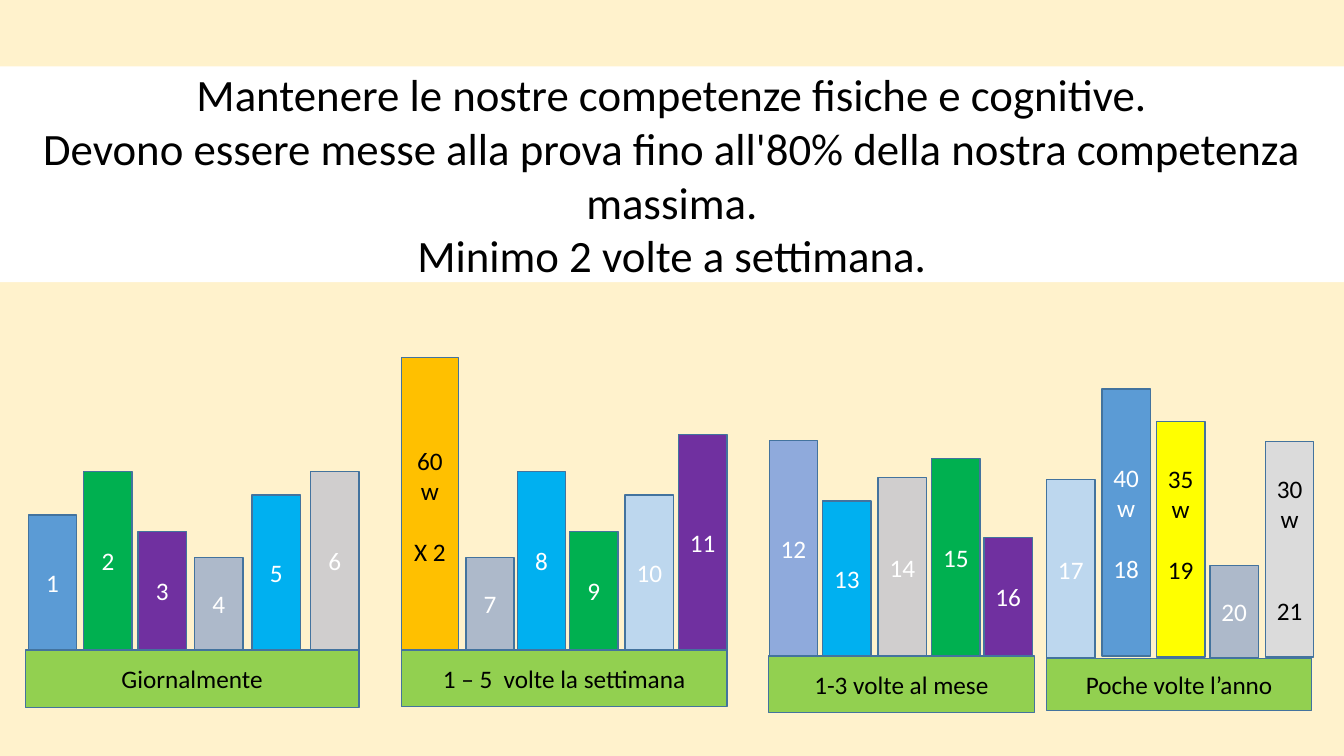
"""Build a slide of numbered activity bars grouped by how often they are practised."""
import pptx
import pptx.dml.color
import pptx.enum.shapes
import pptx.enum.text
import pptx.util

Inches, Pt = pptx.util.Inches, pptx.util.Pt
LINE_HEIGHT = 22
COLORS = {
    "cream": "FFF2CC", "white": "FFFFFF", "black": "000000", "outline": "43739E",
    "lime": "92D050", "blue": "5B9BD5", "green": "00B050", "purple": "7030A0",
    "slate": "ADB9CA", "sky": "00B0F0", "silver": "D0CECE", "orange": "FFC000",
    "pale": "BDD7EE", "periwinkle": "8FAADC", "yellow": "FFFF00", "gray": "DBDBDB",
}


def rgb(name):
    return pptx.dml.color.RGBColor.from_string(COLORS[name])


def add_box(left, top, width, height, fill, lines, color="black", size=18, outline=True, gap=0):
    sp = slide.shapes.add_shape(
        pptx.enum.shapes.MSO_SHAPE.RECTANGLE,
        Inches(left), Inches(top), Inches(width), Inches(height))
    sp.shadow.inherit = False
    sp.fill.solid()
    sp.fill.fore_color.rgb = rgb(fill)
    if outline:
        sp.line.color.rgb = rgb("outline")
        sp.line.width = Pt(1)
    else:
        sp.line.fill.background()
    tf = sp.text_frame
    tf.word_wrap = True
    tf.vertical_anchor = pptx.enum.text.MSO_ANCHOR.MIDDLE
    for i, line in enumerate(lines):
        p = tf.paragraphs[0] if i == 0 else tf.add_paragraph()
        p.alignment = pptx.enum.text.PP_ALIGN.CENTER
        if i and gap:
            p.space_before = Pt(gap * LINE_HEIGHT)
        r = p.add_run()
        r.text = line
        r.font.name = "Calibri"
        r.font.size = Pt(size)
        r.font.color.rgb = rgb(color)
    return sp


prs = pptx.Presentation()
prs.slide_width, prs.slide_height = Inches(13.33), Inches(7.5)
slide = prs.slides.add_slide(prs.slide_layouts[6])
slide.background.fill.solid()
slide.background.fill.fore_color.rgb = rgb("cream")

# label, left, top, width, height, bars as (left, height, fill, text)
groups = [
    ("Giornalmente", 0.25, 6.45, 3.31, 0.57, [
        (0.28, 1.34, "blue", "1"), (0.83, 1.77, "green", "2"), (1.37, 1.18, "purple", "3"),
        (1.93, 0.92, "slate", "4"), (2.5, 1.54, "sky", "5"), (3.08, 1.77, "silver", "6")]),
    ("1 – 5  volte la settimana", 3.98, 6.45, 3.23, 0.56, [
        (4.62, 0.92, "slate", "7"), (5.13, 1.77, "sky", "8"), (5.65, 1.18, "green", "9"),
        (6.2, 1.54, "pale", "10"), (6.73, 2.14, "purple", "11")]),
    ("1-3 volte al mese", 7.62, 6.51, 2.64, 0.56, [
        (7.63, 2.14, "periwinkle", "12"), (8.16, 1.54, "sky", "13"), (8.71, 1.77, "silver", "14"),
        (9.24, 1.96, "green", "15"), (9.76, 1.18, "purple", "16")]),
    ("Poche volte l’anno", 10.38, 6.53, 2.63, 0.52, [
        (10.38, 1.77, "pale", "17"), (12, 0.92, "slate", "20")]),
]

add_box(3.98, 3.55, 0.57, 2.94, "orange", ["60 w", "X 2"], gap=1)
add_box(10.93, 3.86, 0.48, 2.65, "blue", ["40 w", "18"], "white", gap=1)
bar_19 = add_box(11.47, 4.18, 0.48, 2.34, "yellow", ["35 w", "19"], gap=1)
bar_19.text_frame.margin_bottom = Inches(0.05) + Pt(LINE_HEIGHT)
add_box(12.55, 4.38, 0.48, 2.14, "gray", ["30 w", "21"], gap=2)

for label, left, top, width, height, bars in groups:
    for bar_left, bar_height, fill, number in bars:
        add_box(bar_left, top - bar_height, 0.48, bar_height, fill, [number], "white")
    add_box(left, top, width, height, "lime", [label])

add_box(0, 0.66, 13.33, 2.14, "white", [
    "Mantenere le nostre competenze fisiche e cognitive.",
    "Devono essere messe alla prova fino all'80% della nostra competenza massima.",
    "Minimo 2 volte a settimana.",
], size=32, outline=False)

prs.save("out.pptx")
